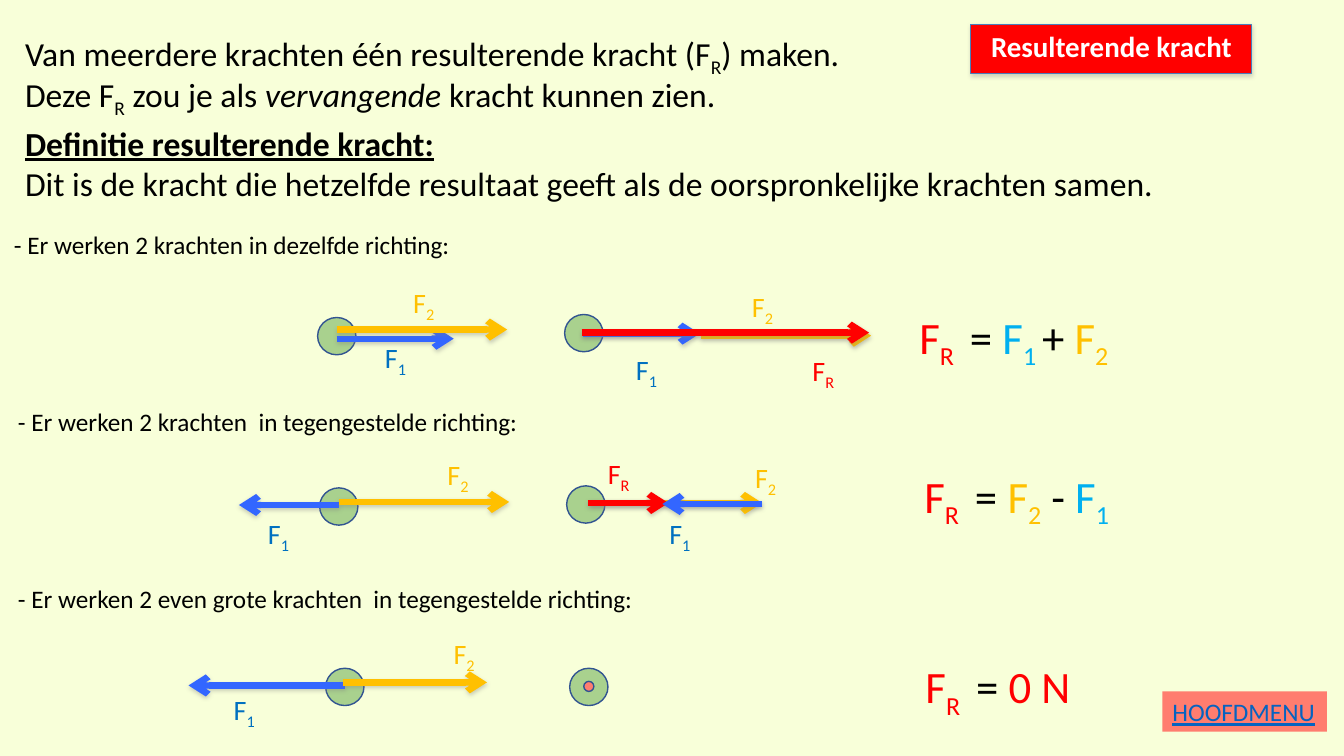
import pptx
import pptx.util
import pptx.dml.color
import pptx.enum.shapes
import pptx.enum.text
import pptx.oxml
import pptx.oxml.ns

Inches = pptx.util.Inches
Shape = pptx.enum.shapes.MSO_SHAPE
BLACK, RED, YELLOW, BLUE = "000000", "FF0000", "FFC000", "3366FF"
DARK_BLUE, LIGHT_BLUE, GREEN, PINK, OUTLINE = "0070C0", "00B0F0", "A9D18E", "FF7D6F", "325491"


def paint(target, colour):
    if hasattr(target, "solid"):
        target.solid()
        target = target.fore_color
    target.rgb = pptx.dml.color.RGBColor.from_string(colour)


def write(para, text, size=18, colour=BLACK, bold=False, italic=False, underline=False):
    for row, line in enumerate(text.split("\n")):
        if row:
            para.add_line_break()
        for position, part in enumerate(line.split("~")):
            if not part:
                continue
            span = para.add_run()
            span.text = part
            span.font.name = "Calibri"
            span.font.size = pptx.util.Pt(size)
            span.font.bold = bold
            span.font.italic = italic
            span.font.underline = underline
            paint(span.font.color, colour)
            if position % 2:
                span.font._element.set("baseline", "-25000")


deck = pptx.Presentation()
deck.slide_width, deck.slide_height = Inches(13.33), Inches(7.5)
page = deck.slides.add_slide(deck.slide_layouts[5])
paint(page.background.fill, "F8FFD9")

banner = page.shapes.add_shape(Shape.RECTANGLE, Inches(9.63), Inches(0.24), Inches(2.78), Inches(0.49))
paint(banner.fill, RED)
paint(banner.line.color, "4A7EBB")
banner.line.width = pptx.util.Pt(0.75)
shadowed = [(banner, 35, 1.8)]

title = page.shapes.title
title.left, title.top, title.width, title.height = map(Inches, (9.73, 0.28, 2.68, 0.4))
title.text_frame.auto_size = pptx.enum.text.MSO_AUTO_SIZE.NONE
title.text_frame.vertical_anchor = pptx.enum.text.MSO_ANCHOR.MIDDLE
heading = title.text_frame.paragraphs[0]
heading.alignment = pptx.enum.text.PP_ALIGN.LEFT
heading.line_spacing = 0.9
write(heading, "Resulterende kracht", size=20.7, colour="FFFFFF", bold=True)
page.shapes._spTree.append(title._element)

BALL_WIDTH, BALL_HEIGHT, DOT = 0.38, 0.37, 0.1
balls = [(3.15, 3.15), (5.6, 3.12), (3.17, 4.84), (5.62, 4.82), (3.23, 6.63), (5.65, 6.63)]
circles = [(left, top, BALL_WIDTH, BALL_HEIGHT, GREEN) for left, top in balls]
circles.append((5.79, 6.76, DOT, DOT, PINK))
for *place, colour in circles:
    circle = page.shapes.add_shape(Shape.OVAL, *map(Inches, place))
    circle.shadow.inherit = False
    paint(circle.fill, colour)
    paint(circle.line.color, OUTLINE)
    circle.line.width = pptx.util.Pt(1)

forces = [
    (3.34, 4.5, 3.36, BLUE), (3.34, 5.03, 3.27, YELLOW),
    (5.78, 6.94, 3.31, BLUE), (6.95, 8.64, 3.33, YELLOW), (5.77, 8.62, 3.3, RED),
    (3.36, 2.37, 5.01, BLUE), (3.36, 5.05, 4.98, YELLOW),
    (5.86, 7.56, 4.99, YELLOW), (5.83, 6.63, 4.99, RED), (7.56, 6.57, 5, BLUE),
    (3.42, 1.87, 6.8, BLUE), (3.4, 4.83, 6.77, YELLOW),
]
for start, end, height, colour in forces:
    arrow = page.shapes.add_connector(
        pptx.enum.shapes.MSO_CONNECTOR.STRAIGHT, Inches(start), Inches(height), Inches(end), Inches(height))
    paint(arrow.line.color, colour)
    arrow.line.width = pptx.util.Pt(4.5)
    arrow.line._get_or_add_ln().append(
        pptx.oxml.parse_xml(f'<a:tailEnd {pptx.oxml.ns.nsdecls("a")} type="arrow"/>'))
    shadowed.append((arrow, 38, 1.6))

for shape, opacity, distance in shadowed:
    shape._element.spPr.append(pptx.oxml.parse_xml(
        f'<a:effectLst {pptx.oxml.ns.nsdecls("a")}>'
        f'<a:outerShdw blurRad="{pptx.util.Pt(3.1)}" dist="{pptx.util.Pt(distance)}" dir="5400000" rotWithShape="0">'
        f'<a:srgbClr val="808080"><a:alpha val="{opacity * 1000}"/></a:srgbClr>'
        '</a:outerShdw></a:effectLst>'))

big = {"size": 24}
intro = [
    ("Van meerdere krachten één resulterende kracht (F~R~) maken.\nDeze F~R~ zou je als ", big),
    ("vervangende", {"size": 24, "italic": True}),
    (" kracht kunnen zien.", big),
]
definition = [
    ("Definitie resulterende kracht:\n", {"size": 24, "bold": True, "underline": True}),
    ("Dit is de kracht die hetzelfde resultaat geeft als de oorspronkelijke krachten samen.", big),
]
texts = [
    (0.15, 0.28, 8.91, 0.95, True, intro),
    (0.15, 1.17, 11.4, 0.91, True, definition),
    (0.04, 2.23, 4.58, 0.4, False, [("- Er werken 2 krachten in dezelfde richting:", {})]),
    (0.08, 3.98, 5.22, 0.4, False, [("- Er werken 2 krachten  in tegengestelde richting:", {})]),
    (0.08, 5.74, 6.32, 0.4, False, [("- Er werken 2 even grote krachten  in tegengestelde richting:", {})]),
    (11.53, 6.86, 1.63, 0.4, False, [("HOOFDMENU", {"colour": "0563C1", "underline": True})]),
]

labels = {
    ("1", DARK_BLUE): [(3.72, 3.33), (6.21, 3.45), (2.56, 5.07), (6.54, 5.07), (2.22, 6.82)],
    ("2", YELLOW): [(4, 2.78), (7.36, 2.82), (4.34, 4.49), (7.39, 4.52), (4.4, 6.27)],
    ("R", RED): [(7.96, 3.46), (5.93, 4.48)],
}
for (index, colour), places in labels.items():
    for left, top in places:
        texts.append((left, top, 0.43, 0.44, True, [(f"F~{index}~", {"size": 20, "colour": colour})]))

formulas = [
    (9.02, 3.02, 2.21, [("F~R ~", RED), (" =", BLACK), (" F~1 ~", LIGHT_BLUE), ("+ ", BLACK), ("F~2~", YELLOW)]),
    (9.07, 4.6, 2.13, [("F~R ~", RED), (" = ", BLACK), ("F~2~", YELLOW), (" - ", BLACK), ("F~1~", LIGHT_BLUE)]),
    (9.08, 6.49, 1.69, [("F~R ~", RED), (" = ", BLACK), ("0 N", RED)]),
]
for left, top, width, terms in formulas:
    pieces = [(term, {"size": 32, "colour": colour}) for term, colour in terms]
    texts.append((left, top, width, 0.64, False, pieces))

for left, top, width, height, wrap, pieces in texts:
    box = page.shapes.add_textbox(*map(Inches, (left, top, width, height)))
    box.text_frame.word_wrap = wrap
    if pieces is intro:
        box.text_frame.paragraphs[0].line_spacing = 0.9
    else:
        box.text_frame.auto_size = pptx.enum.text.MSO_AUTO_SIZE.SHAPE_TO_FIT_TEXT
    if pieces[0][0] == "HOOFDMENU":
        paint(box.fill, PINK)
    for text, style in pieces:
        write(box.text_frame.paragraphs[0], text, **style)

deck.save("out.pptx")
